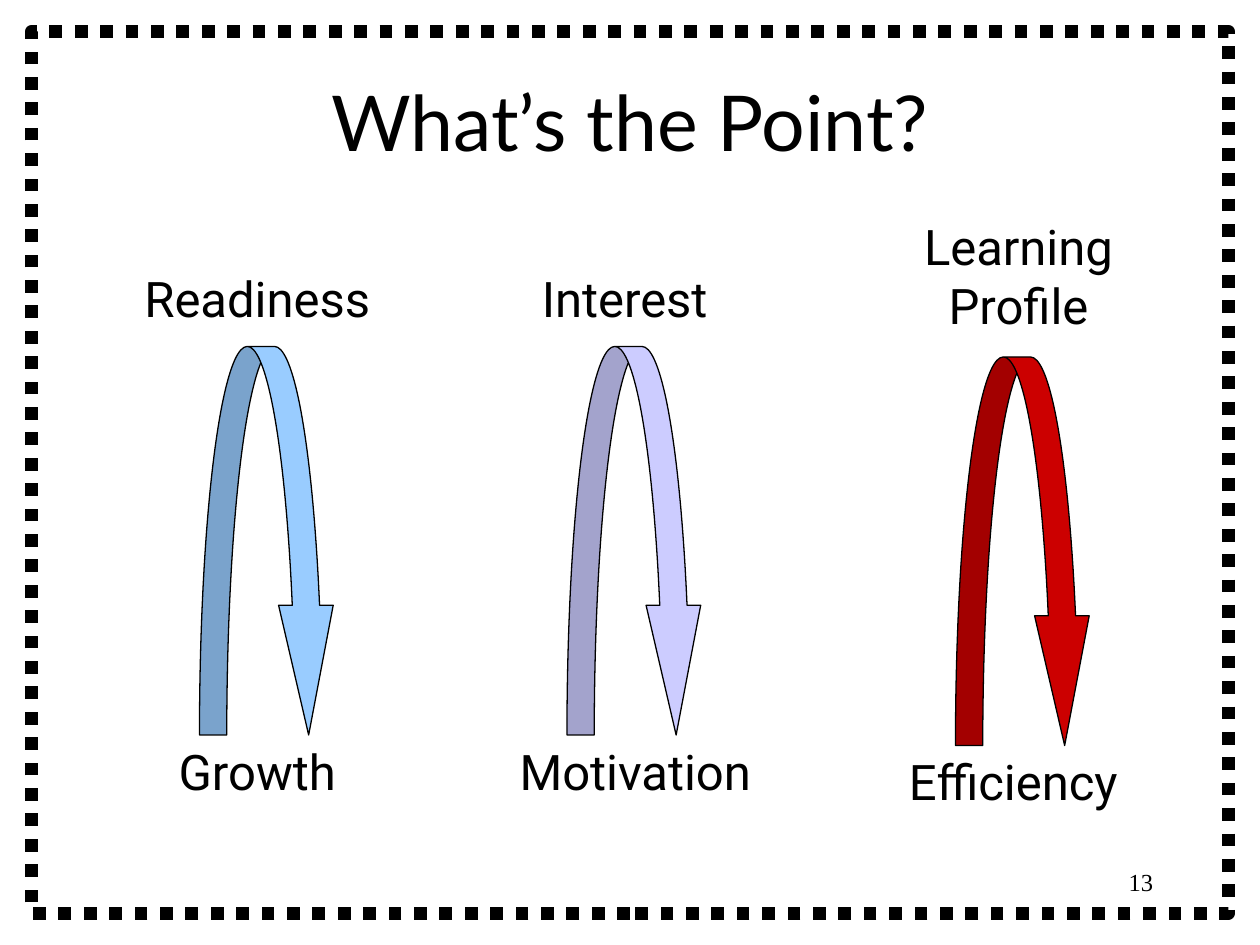
import pptx
import pptx.util
import pptx.dml.color
import pptx.enum.dml
import pptx.enum.shapes
import pptx.enum.text

COLORS = {"ink": "000000", "blue": "99CCFF", "lilac": "CCCCFF", "red": "CC0000"}
ALIGN = pptx.enum.text.PP_ALIGN
ANCHOR = pptx.enum.text.MSO_ANCHOR
SHAPE = pptx.enum.shapes.MSO_SHAPE

deck = pptx.Presentation()
deck.slide_width = pptx.util.Inches(10)
deck.slide_height = pptx.util.Inches(7.5)
page = deck.slides.add_slide(deck.slide_layouts[6])

# Grid of 120 columns by 90 rows
CELL = deck.slide_width / 120


def grid(*cells):
    return [round(cell * CELL) for cell in cells]


def add_text(text, *cells, font="Roboto", size=28, align=ALIGN.CENTER,
             anchor=ANCHOR.TOP, grow=False):
    box = page.shapes.add_textbox(*grid(*cells))
    frame = box.text_frame
    frame.word_wrap = True
    frame.vertical_anchor = anchor
    if grow:
        frame.auto_size = pptx.enum.text.MSO_AUTO_SIZE.SHAPE_TO_FIT_TEXT
    para = frame.paragraphs[0]
    para.alignment = align
    span = para.add_run()
    span.text = text
    span.font.name = font
    span.font.size = pptx.util.Pt(size)
    span.font.color.rgb = pptx.dml.color.RGBColor.from_string(COLORS["ink"])


# Page number and title
add_text("13", 86, 82, 25, 6, font="Times New Roman", size=14, align=ALIGN.RIGHT)
add_text("What’s the Point?", 9, 4, 102, 15, font="Lato", size=44, anchor=ANCHOR.MIDDLE)

# Each arrow leads from the label above it to the label below it
# color, arrow column and row, top label with its cells, bottom label with its column
arrows = [
    ("blue", 19, 33, "Readiness", (9, 25, 31, 6.8), "Growth", 9),
    ("lilac", 54, 33, "Interest", (44, 25, 31, 6.8), "Motivation", 45),
    ("red", 91, 34, "Learning Profile", (82, 20, 30, 12.4), "Efficiency", 81),
]
for color, column, row, start, start_cells, goal, goal_column in arrows:
    arrow = page.shapes.add_shape(SHAPE.CURVED_DOWN_ARROW, *grid(column, row, 13, 37))
    for index, value in enumerate((0.2, 0.4, 0.95)):
        arrow.adjustments[index] = value
    arrow.shadow.inherit = False
    arrow.fill.solid()
    arrow.fill.fore_color.rgb = pptx.dml.color.RGBColor.from_string(COLORS[color])
    arrow.line.color.rgb = pptx.dml.color.RGBColor.from_string(COLORS["ink"])
    arrow.line.width = pptx.util.Pt(0.75)
    add_text(start, *start_cells, grow=True)
    add_text(goal, goal_column, row + 37, 31, 6.8, grow=True)

# Dotted border
border = page.shapes.add_shape(SHAPE.RECTANGLE, *grid(3, 3, 114, 84))
border.shadow.inherit = False
border.fill.background()
border.line.color.rgb = pptx.dml.color.RGBColor.from_string(COLORS["ink"])
border.line.width = pptx.util.Pt(7.25)
border.line.dash_style = pptx.enum.dml.MSO_LINE.ROUND_DOT

deck.save("out.pptx")
